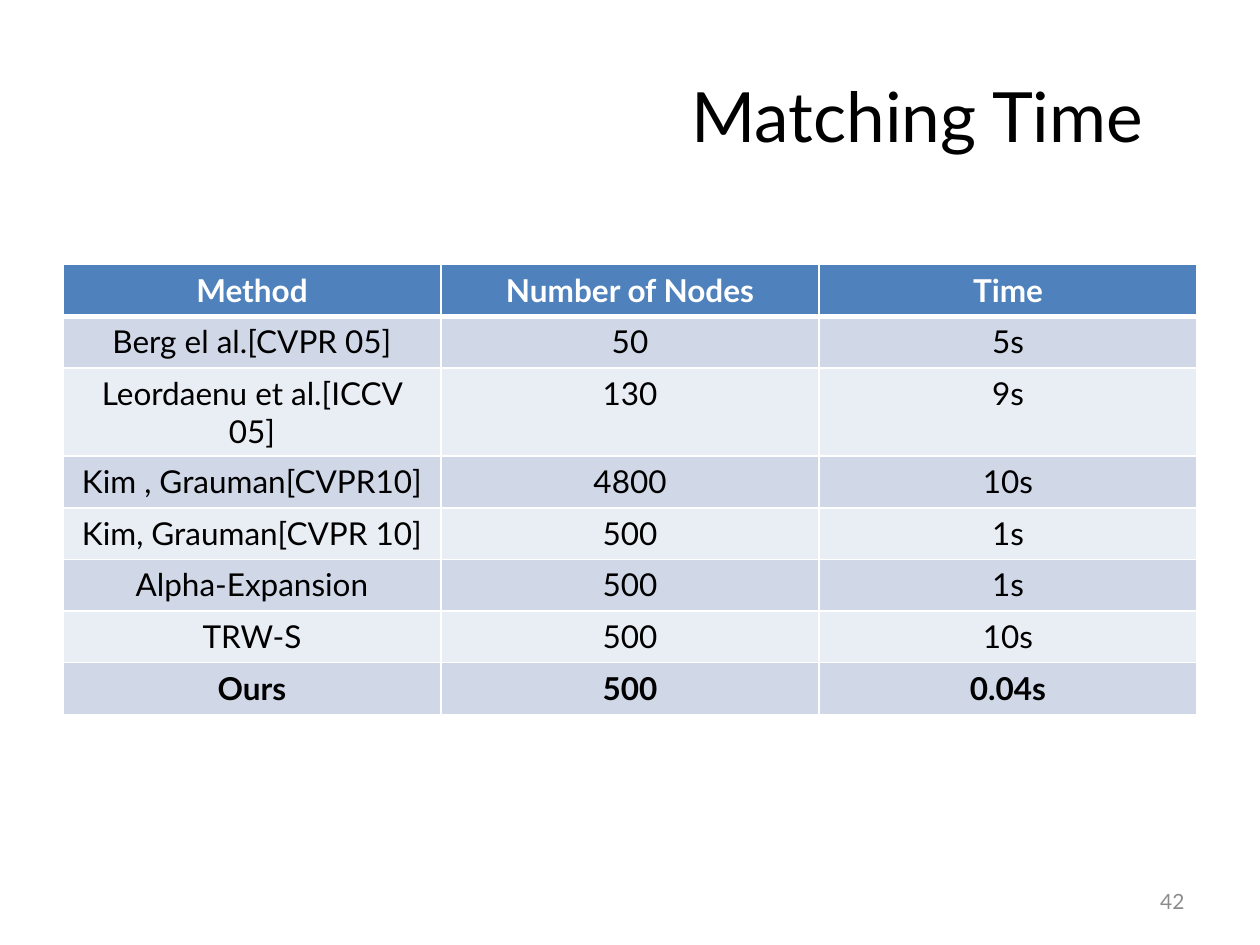
import pptx
import pptx.dml.color
import pptx.enum.text
import pptx.oxml
import pptx.oxml.ns
import pptx.util
from pptx.util import Inches

COLORS = {
    "text": "000000",
    "header": "4F81BD",
    "band_dark": "D0D8E8",
    "band_light": "E9EDF4",
    "white": "FFFFFF",
    "page_number": "8C8C8C",
}

TIMINGS = [
    ("Method", "Number of Nodes", "Time"),
    ("Berg el al.[CVPR 05]", "50", "5s"),
    ("Leordaenu et al.[ICCV 05]", "130", "9s"),
    ("Kim , Grauman[CVPR10]", "4800", "10s"),
    ("Kim, Grauman[CVPR 10]", "500", "1s"),
    ("Alpha-Expansion", "500", "1s"),
    ("TRW-S", "500", "10s"),
    ("Ours", "500", "0.04s"),
]


def rgb(name):
    return pptx.dml.color.RGBColor.from_string(COLORS[name])


class SlideBuilder:
    """Holds the text style and the slide being filled."""

    font_name = "Lato"

    def __init__(self, slide):
        self.slide = slide

    def add_text(self, frame, text, size, color, align, bold=False):
        paragraph = frame.paragraphs[0]
        paragraph.alignment = align
        run = paragraph.add_run()
        run.text = text
        run.font.name = self.font_name
        run.font.size = pptx.util.Pt(size)
        run.font.bold = bold
        run.font.color.rgb = rgb(color)

    def right_text(self, text, left, top, width, height, size, color):
        box = self.slide.shapes.add_textbox(
            Inches(left), Inches(top), Inches(width), Inches(height))
        frame = box.text_frame
        frame.word_wrap = True
        frame.vertical_anchor = pptx.enum.text.MSO_ANCHOR.MIDDLE
        self.add_text(frame, text, size, color, pptx.enum.text.PP_ALIGN.RIGHT)

    def borders(self, cell, top, bottom):
        """Draw white borders; top and bottom are widths in points."""
        properties = cell._tc.get_or_add_tcPr()
        widths = {"lnL": 1, "lnR": 1, "lnT": top, "lnB": bottom}
        for position, (side, width) in enumerate(widths.items()):
            line = pptx.oxml.parse_xml(
                f'<a:{side} {pptx.oxml.ns.nsdecls("a")} w="{pptx.util.Pt(width)}">'
                f'<a:solidFill><a:srgbClr val="{COLORS["white"]}"/></a:solidFill>'
                f'</a:{side}>')
            properties.insert(position, line)

    def table(self, rows, left, top, column_width, row_height):
        """Draw a banded table with a header row and a bold last row."""
        columns = len(rows[0])
        table = self.slide.shapes.add_table(
            len(rows), columns, Inches(left), Inches(top),
            Inches(column_width * columns), Inches(row_height * len(rows))).table
        for row, values in enumerate(rows):
            is_header = row == 0
            band = "band_dark" if row % 2 else "band_light"
            for column, value in enumerate(values):
                cell = table.cell(row, column)
                cell.fill.solid()
                cell.fill.fore_color.rgb = rgb("header" if is_header else band)
                self.borders(cell, top=3 if row == 1 else 1,
                             bottom=3 if is_header else 1)
                self.add_text(cell.text_frame, value, 18,
                              "white" if is_header else "text",
                              pptx.enum.text.PP_ALIGN.CENTER,
                              bold=row in (0, len(rows) - 1))


def main():
    deck = pptx.Presentation()
    deck.slide_width = Inches(10)
    deck.slide_height = Inches(7.5)
    builder = SlideBuilder(deck.slides.add_slide(deck.slide_layouts[6]))
    builder.right_text("Matching Time", -0.68, 0.6, 9.85, 0.63, 39.6, "text")
    builder.table(TIMINGS, 0.5, 2.1, column_width=3, row_height=0.41)
    builder.right_text("42", 7.17, 6.95, 2.33, 0.4, 12, "page_number")
    deck.save("out.pptx")


if __name__ == "__main__":
    main()
